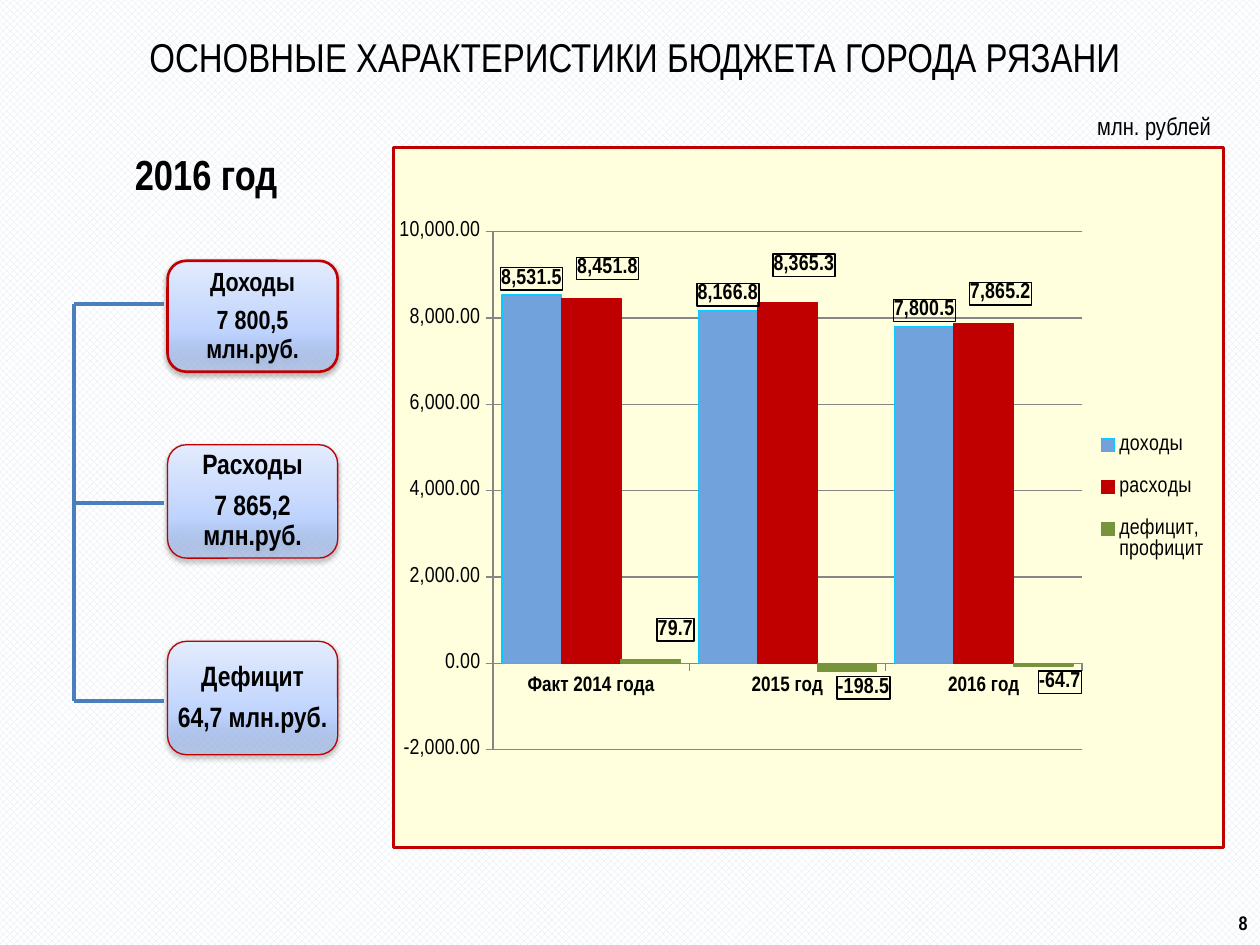
"""Build the slide on the main characteristics of the Ryazan city budget."""
from copy import deepcopy
from dataclasses import dataclass

from lxml import etree
from pptx import Presentation
from pptx import util as u
from pptx.chart.data import CategoryChartData
from pptx.dml.color import RGBColor
from pptx.enum import chart as ch, dml, shapes, text
from pptx.oxml import parse_xml
from pptx.oxml.ns import nsdecls, qn


@dataclass(frozen=True)
class Theme:
    font: str = "Arial Narrow"
    ink: str = "000000"
    paper: str = "FFFFFF"
    check: str = "DCE6F2"
    red: str = "C00000"
    link: str = "4B7EBC"
    panel: str = "FFFFDD"
    grid: str = "868686"
    title: float = 23
    head: float = 24
    note: float = 14
    chart: float = 12.5
    category: float = 12


@dataclass(frozen=True)
class Label:
    words: str
    at: tuple
    size: float
    align: text.PP_ALIGN
    bold: bool = False
    small_caps: bool = False


@dataclass(frozen=True)
class Card:
    name: str
    amount: str
    top: float
    height: float
    size: float
    border: float
    link_y: float


@dataclass(frozen=True)
class Series:
    name: str
    values: tuple
    fill: str
    line: str
    label_format: str
    offsets: tuple


T = Theme()
YEARS = ("Факт 2014 года", "2015 год", "2016 год")
LABELS = (
    Label("млн. рублей", (8.61, 0.83, 1.26, 0.34), T.note, text.PP_ALIGN.LEFT),
    Label("2016 год", (0.57, 1.13, 2.13, 0.5), T.head, text.PP_ALIGN.CENTER, True),
    Label("8", (9.33, 7.14, 0.67, 0.35), T.note, text.PP_ALIGN.RIGHT, True, True),
)
CARDS = (
    Card("Доходы", "7 800,5 млн.руб.", 2.07, 0.88, 15, 1.5, 2.41),
    Card("Расходы", "7 865,2 млн.руб.", 3.53, 0.9, 16, 0.75, 3.99),
    Card("Дефицит", "64,7 млн.руб.", 5.09, 0.9, 16, 0.75, 5.56),
)
SERIES = (
    Series("доходы", (8531.5, 8166.8, 7800.5), "72A2DC", "09CAFF", "#,##0.0", ()),
    Series("расходы", (8451.8, 8365.3, 7865.2), T.red, T.red, "#,##0.0",
           ((0.02, -0.02), (0.02, -0.03), (0.02, -0.02))),
    Series("дефицит, профицит", (79.7, -198.5, -64.7), "77933C", "77933C", "0.0",
           ((0.03, -0.02), (0.02, 0), (0.02, 0))),
)


def rgb(value: str) -> RGBColor:
    """Turn a hex string into a colour."""
    return RGBColor.from_string(value)


def assign(obj, values: dict) -> None:
    """Set every named attribute on an object."""
    for name, value in values.items():
        setattr(obj, name, value)


def style_font(font, size: float, bold: bool = False) -> None:
    """Apply the theme font and ink."""
    assign(font, {"name": T.font, "size": u.Pt(size), "bold": bold})
    font.color.rgb = rgb(T.ink)


def style_line(line, color: str, width: float) -> None:
    """Give a line its colour and width."""
    line.color.rgb = rgb(color)
    line.width = u.Pt(width)


def add_title(slide, words: str) -> None:
    """Fill and format the title placeholder."""
    sp = slide.shapes.title
    assign(sp, {"left": u.Inches(0.2), "top": u.Inches(0.21),
                "width": u.Inches(9.69), "height": u.Inches(0.79)})
    tf = sp.text_frame
    tf.text = words
    assign(tf, {"vertical_anchor": text.MSO_ANCHOR.TOP, "word_wrap": True,
                "auto_size": text.MSO_AUTO_SIZE.NONE})
    p = tf.paragraphs[0]
    p.alignment = text.PP_ALIGN.CENTER
    style_font(p.runs[0].font, T.title)


def add_label(slide, label: Label) -> None:
    """Add one line of free text."""
    tf = slide.shapes.add_textbox(*map(u.Inches, label.at)).text_frame
    tf.word_wrap = True
    p = tf.paragraphs[0]
    p.alignment = label.align
    r = p.add_run()
    r.text = label.words
    style_font(r.font, label.size, label.bold)
    if label.small_caps:
        r._r.get_or_add_rPr().set("cap", "small")


def add_card(slide, card: Card) -> None:
    """Add a rounded card with a name and an amount."""
    sp = slide.shapes.add_shape(shapes.MSO_SHAPE.ROUNDED_RECTANGLE,
                                *map(u.Inches, (1.33, card.top, 1.35, card.height)))
    style_line(sp.line, T.red, card.border)
    pr = sp._element.spPr
    pr.find(qn("a:ln")).addprevious(parse_xml(
        f'<a:gradFill {nsdecls("a")} rotWithShape="1"><a:gsLst>'
        '<a:gs pos="0"><a:srgbClr val="A4C4FF"><a:alpha val="50000"/></a:srgbClr></a:gs>'
        '<a:gs pos="35000"><a:srgbClr val="BFD4FF"/></a:gs>'
        '<a:gs pos="100000"><a:srgbClr val="E6EEFF"/></a:gs>'
        '</a:gsLst><a:lin ang="16200000" scaled="1"/></a:gradFill>'))
    pr.append(parse_xml(
        f'<a:effectLst {nsdecls("a")}><a:outerShdw blurRad="40000" dist="20000" dir="5400000" '
        'rotWithShape="0"><a:srgbClr val="000000"><a:alpha val="38000"/></a:srgbClr>'
        '</a:outerShdw></a:effectLst>'))
    tf = sp.text_frame
    tf.text = f"{card.name}\n{card.amount}"
    assign(tf, {"word_wrap": True, "vertical_anchor": text.MSO_ANCHOR.MIDDLE})
    assign(tf, {f"margin_{side}": u.Inches(0.01) for side in ("left", "top", "right", "bottom")})
    for p in tf.paragraphs:
        assign(p, {"alignment": text.PP_ALIGN.CENTER, "line_spacing": 0.9, "space_after": u.Pt(6)})
        style_font(p.runs[0].font, card.size, True)


def add_link(slide, start: tuple, end: tuple) -> None:
    """Draw a straight tree line."""
    sp = slide.shapes.add_connector(shapes.MSO_CONNECTOR.STRAIGHT, *map(u.Inches, start + end))
    style_line(sp.line, T.link, 2.25)
    etree.SubElement(sp._element.spPr, qn("a:effectLst"))


def layout_xml(**values):
    """Build a manual chart layout."""
    items = "".join(f'<c:{k} val="{v}"/>' for k, v in values.items())
    return parse_xml(f'<c:layout {nsdecls("c")}><c:manualLayout>{items}</c:manualLayout></c:layout>')


def set_layout(el, index: int, **values) -> None:
    """Replace the layout of a chart part."""
    for old in el.findall(qn("c:layout")):
        el.remove(old)
    el.insert(index, layout_xml(**values))


def frame_xml(fill: str, color: str, width: float):
    """Build chart shape properties with a fill and a border."""
    return parse_xml(f'<c:spPr {nsdecls("c", "a")}>{fill}<a:ln w="{u.Pt(width)}"><a:solidFill>'
                     f'<a:srgbClr val="{color}"/></a:solidFill></a:ln></c:spPr>')


def style_series(ser, item: Series) -> None:
    """Colour a series and place its boxed labels."""
    ser.invert_if_negative = False
    ser.format.fill.solid()
    ser.format.fill.fore_color.rgb = rgb(item.fill)
    style_line(ser.format.line, item.line, 0.75)
    labels = ser.data_labels
    assign(labels, {"show_value": True, "number_format": item.label_format,
                    "number_format_is_linked": False,
                    "position": ch.XL_LABEL_POSITION.OUTSIDE_END})
    style_font(labels.font, T.chart, True)
    el = labels._element
    el.find(qn("c:txPr")).addprevious(frame_xml("<a:noFill/>", T.ink, 0.75))
    for old in el.findall(qn("c:showLeaderLines")):
        el.remove(old)
    shared = list(el)
    etree.SubElement(el, qn("c:showLeaderLines")).set("val", "0")
    for i, (x, y) in enumerate(item.offsets):
        point = parse_xml(f'<c:dLbl {nsdecls("c")}><c:idx val="{i}"/></c:dLbl>')
        point.append(layout_xml(x=x, y=y))
        point.extend(deepcopy(shared))
        el.insert(i, point)


def add_budget_chart(slide) -> None:
    """Add the clustered columns of income, spending and balance."""
    data = CategoryChartData()
    data.categories = YEARS
    for item in SERIES:
        data.add_series(item.name, item.values)
    chart = slide.shapes.add_chart(ch.XL_CHART_TYPE.COLUMN_CLUSTERED,
                                   *map(u.Inches, (3.11, 1.16, 6.61, 5.58)), data).chart
    style_font(chart.font, T.chart)
    assign(chart, {"has_title": False, "has_legend": True})
    assign(chart.legend, {"position": ch.XL_LEGEND_POSITION.RIGHT, "include_in_layout": False})
    assign(chart.plots[0], {"gap_width": 30, "overlap": 0, "vary_by_categories": False})
    val, cat = chart.value_axis, chart.category_axis
    assign(val, {"minimum_scale": -2000, "maximum_scale": 10000, "major_unit": 2000,
                 "has_major_gridlines": True})
    assign(val.tick_labels, {"number_format": "#,##0.00", "number_format_is_linked": False})
    for axis in (val, cat):
        axis.major_tick_mark = ch.XL_TICK_MARK.OUTSIDE
    for part in (val, cat, val.major_gridlines):
        style_line(part.format.line, T.grid, 0.75)
    style_font(cat.tick_labels.font, T.category, True)
    for ser, item in zip(chart.plots[0].series, SERIES):
        style_series(ser, item)
    body = chart._chartSpace.chart
    set_layout(body.plotArea, 0, layoutTarget="inner", xMode="edge", yMode="edge",
               x=0.12, y=0.12, w=0.71, h=0.74)
    set_layout(chart.legend._element, 1, xMode="edge", yMode="edge", x=0.84, y=0.38, w=0.15, h=0.24)
    fill = f'<a:solidFill><a:srgbClr val="{T.panel}"/></a:solidFill>'
    body.addnext(frame_xml(fill, T.red, 1.75))


def main() -> None:
    """Assemble and save the slide."""
    prs = Presentation()
    assign(prs, {"slide_width": u.Inches(10), "slide_height": u.Inches(7.5)})
    slide = prs.slides.add_slide(prs.slide_layouts[5])
    fill = slide.background.fill
    fill.patterned()
    fill.pattern = dml.MSO_PATTERN.LARGE_CHECKER_BOARD
    fill.fore_color.rgb, fill.back_color.rgb = rgb(T.check), rgb(T.paper)
    add_title(slide, "ОСНОВНЫЕ ХАРАКТЕРИСТИКИ БЮДЖЕТА ГОРОДА РЯЗАНИ")
    add_budget_chart(slide)
    for card in CARDS:
        add_card(slide, card)
        add_link(slide, (0.59, card.link_y), (1.3, card.link_y))
    add_link(slide, (0.59, CARDS[0].link_y), (0.59, CARDS[-1].link_y))
    for label in LABELS:
        add_label(slide, label)
    prs.save("out.pptx")


if __name__ == "__main__":
    main()
